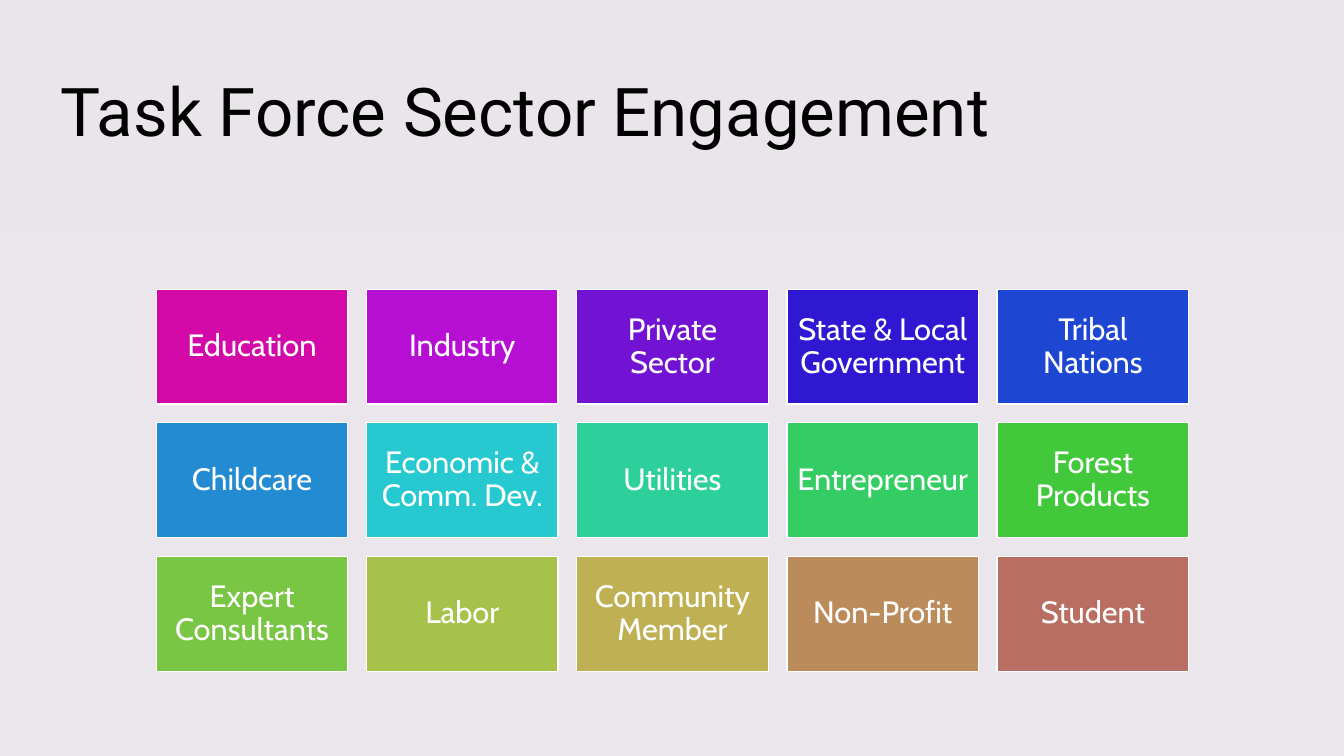
from lxml import etree
from pptx import Presentation
from pptx.dml.color import RGBColor
from pptx.enum.shapes import MSO_SHAPE
from pptx.enum.text import MSO_ANCHOR, PP_ALIGN
from pptx.oxml.ns import qn
from pptx.util import Inches, Pt

COLORS = {
    "background": "EAE5EB",
    "band": "FDFCFD",
    "title": "000000",
    "white": "FFFFFF",
    "Education": "D40AA8",
    "Industry": "B70ED4",
    "Private Sector": "7213D3",
    "State & Local Government": "3018D3",
    "Tribal Nations": "1D47D2",
    "Childcare": "228BD1",
    "Economic & Comm. Dev.": "27C9D0",
    "Utilities": "2DCF9B",
    "Entrepreneur": "33CD64",
    "Forest Products": "42C93B",
    "Expert Consultants": "79C544",
    "Labor": "A7C24B",
    "Community Member": "BEB053",
    "Non-Profit": "BB8B5B",
    "Student": "B86E62",
}
SECTOR_ROWS = [
    ["Education", "Industry", "Private Sector", "State & Local Government", "Tribal Nations"],
    ["Childcare", "Economic & Comm. Dev.", "Utilities", "Entrepreneur", "Forest Products"],
    ["Expert Consultants", "Labor", "Community Member", "Non-Profit", "Student"],
]
GRID_LEFT, GRID_TOP = 1.55, 2.87
TILE_WIDTH, TILE_HEIGHT = 1.9, 1.14
COLUMN_STEP, ROW_STEP = 2.085, 1.325


def add_rectangle(left, top, width, height, color):
    rectangle = slide.shapes.add_shape(
        MSO_SHAPE.RECTANGLE, Inches(left), Inches(top), Inches(width), Inches(height))
    rectangle.shadow.inherit = False
    rectangle.fill.solid()
    rectangle.fill.fore_color.rgb = RGBColor.from_string(COLORS[color])
    return rectangle


def write_text(shape, text, size, font_name, color, align, inset):
    frame = shape.text_frame
    frame.word_wrap = True
    frame.vertical_anchor = MSO_ANCHOR.MIDDLE
    frame.margin_left = frame.margin_right = Inches(inset)
    frame.margin_top = frame.margin_bottom = Inches(inset)
    paragraph = frame.paragraphs[0]
    paragraph.alignment = align
    paragraph.line_spacing = 0.9
    run = paragraph.add_run()
    run.text = text
    run.font.size = Pt(size)
    run.font.name = font_name
    run.font.color.rgb = RGBColor.from_string(COLORS[color])


presentation = Presentation()
presentation.slide_width = Inches(13.33)
presentation.slide_height = Inches(7.5)
slide = presentation.slides.add_slide(presentation.slide_layouts[6])
slide.background.fill.solid()
slide.background.fill.fore_color.rgb = RGBColor.from_string(COLORS["background"])

title = slide.shapes.add_textbox(Inches(0.6), Inches(0.6), Inches(10.38), Inches(1.08))
write_text(title, "Task Force Sector Engagement", 48, "Roboto", "title", PP_ALIGN.LEFT, 0)

# Nearly transparent band behind the sector grid
band = add_rectangle(0, 2.28, 13.33, 5.22, "band")
band.line.fill.background()
band_color = band.fill._xPr.find(qn("a:solidFill")).find(qn("a:srgbClr"))
etree.SubElement(band_color, qn("a:alpha"), val="5000")

for row, sectors in enumerate(SECTOR_ROWS):
    for column, sector in enumerate(sectors):
        tile = add_rectangle(GRID_LEFT + column * COLUMN_STEP, GRID_TOP + row * ROW_STEP,
                             TILE_WIDTH, TILE_HEIGHT, sector)
        tile.line.color.rgb = RGBColor.from_string(COLORS["white"])
        tile.line.width = Pt(1)
        write_text(tile, sector, 22, "Cabin", "white", PP_ALIGN.CENTER, 0.09)

presentation.save("out.pptx")
